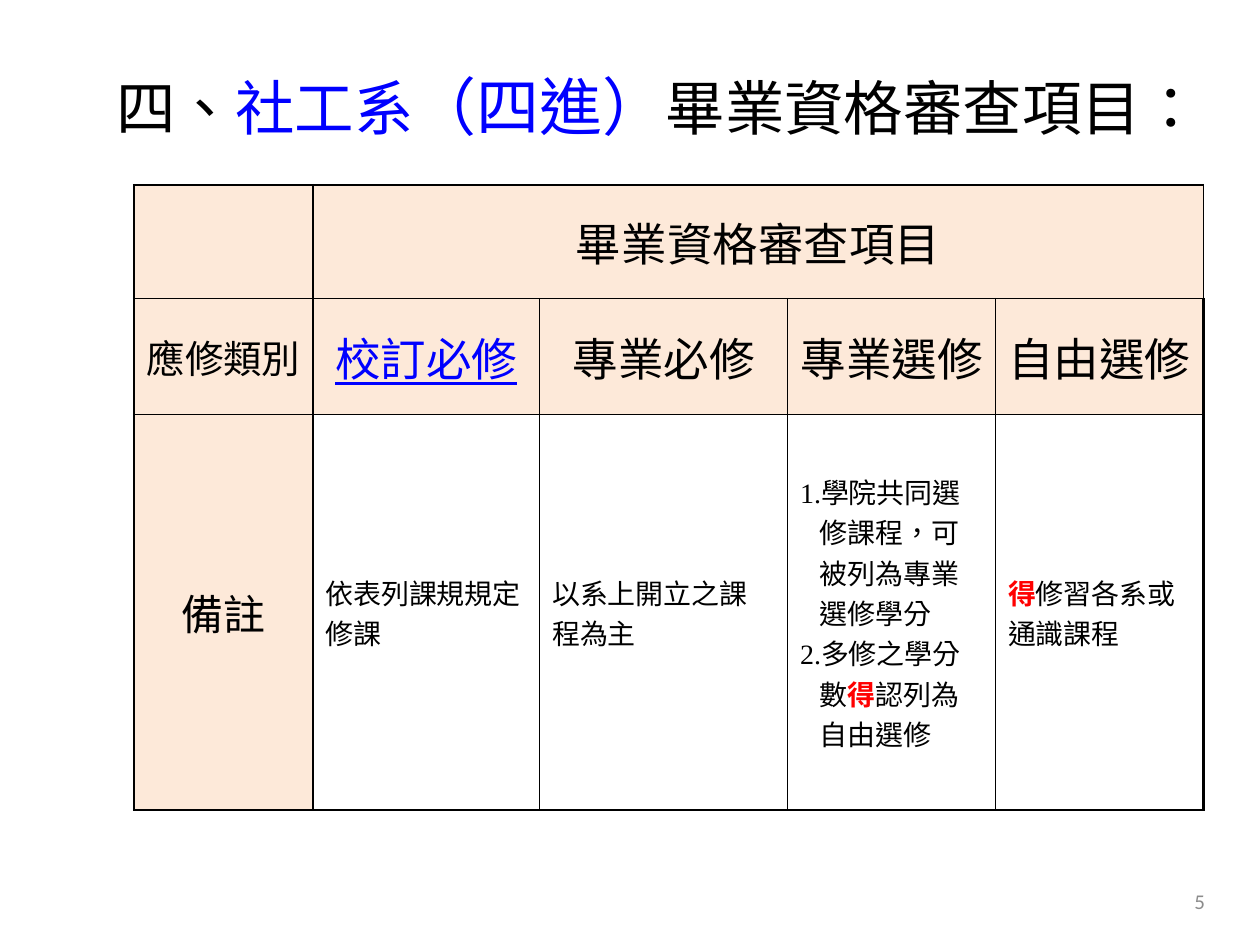
import pptx
import pptx.util
import pptx.dml.color
import pptx.enum.text
import pptx.oxml
import pptx.oxml.ns

Cm, Pt = pptx.util.Cm, pptx.util.Pt
Align = pptx.enum.text.PP_ALIGN
Anchor = pptx.enum.text.MSO_ANCHOR

THEME = {
    "ink": "000000", "blue": "0000FF", "red": "FF0000", "grey": "8C8C8C",
    "peach": "FDE9D9",
    "latin": "Times New Roman", "asian": "Noto Sans CJK JP", "plain": "Calibri",
    "title": 34, "group": 36, "head": 26, "note": 24, "side": 22,
    "body": 16, "page": 12,
    "inner": 1, "outer": 1.5,
}

# A run is (text, size, colour, extra style).
TITLE = [
    ("四、", "title", "ink", ""),
    ("社工系", "title", "blue", ""),
    ("（四進）", "group", "blue", ""),
    ("畢業資格審查項目：", "title", "ink", ""),
]
PAGE = [("5", "page", "grey", "")]


def plain(text, size="body"):
    return (text, size, "ink", "")


MUST = ("得", "body", "red", "bold")

# Each cell is a list of paragraphs, each paragraph a list of runs.
ROWS = [
    [[], [[plain("畢業資格審查項目", "head")]], [], [], []],
    [
        [[plain("應修類別", "side")]],
        [[("校訂必修", "head", "blue", "underline")]],
        [[plain("專業必修", "head")]],
        [[plain("專業選修", "head")]],
        [[plain("自由選修", "head")]],
    ],
    [
        [[plain("備註", "note")]],
        [[plain("依表列課規規定修課")]],
        [[plain("以系上開立之課程為主")]],
        [
            [plain("1.學院共同選修課程，可被列為專業選修學分")],
            [plain("2.多修之學分數"), MUST, plain("認列為自由選修")],
        ],
        [[MUST, plain("修習各系或通識課程")]],
    ],
]
WIDTHS = [3.61, 4.57, 5, 4.19, 4.19]
HEIGHTS = [2.29, 2.34, 7.97]
LIST_CELL = (2, 3)


def tint(name):
    return pptx.dml.color.RGBColor.from_string(THEME[name])


def add_runs(para, runs, latin="latin"):
    for text, size, color, style in runs:
        run = para.add_run()
        run.text = text
        font = run.font
        font.size = Pt(THEME[size])
        font.color.rgb = tint(color)
        font.name = THEME[latin]
        font.bold = style == "bold"
        font.underline = style == "underline"
        props = run._r.get_or_add_rPr()
        props.set("lang", "zh-TW")
        asian = pptx.oxml.parse_xml(
            f'<a:ea {pptx.oxml.ns.nsdecls("a")} typeface="{THEME["asian"]}"/>')
        props.find(pptx.oxml.ns.qn("a:latin")).addnext(asian)


def add_label(slide, place, runs, align, latin):
    frame = slide.shapes.add_textbox(*map(Cm, place)).text_frame
    frame.word_wrap = True
    frame.vertical_anchor = Anchor.MIDDLE
    frame.paragraphs[0].alignment = align
    add_runs(frame.paragraphs[0], runs, latin)


def add_edges(cell, row, col):
    """Draw the cell borders, heavier along the rim of the table."""
    rims = {"L": col == 0, "R": col == len(WIDTHS) - 1,
            "T": row == 0, "B": row == len(HEIGHTS) - 1}
    props = cell._tc.get_or_add_tcPr()
    for side, rim in rims.items():
        width = Pt(THEME["outer" if rim else "inner"])
        props.append(pptx.oxml.parse_xml(
            f'<a:ln{side} {pptx.oxml.ns.nsdecls("a")} w="{width}"><a:solidFill>'
            f'<a:srgbClr val="{THEME["ink"]}"/></a:solidFill></a:ln{side}>'))


def fill_cell(cell, row, col, paras):
    head = row < 2 or col == 0
    add_edges(cell, row, col)
    if head:
        cell.fill.solid()
        cell.fill.fore_color.rgb = tint("peach")
    else:
        cell.fill.background()
    cell.vertical_anchor = Anchor.MIDDLE
    cell.margin_left = cell.margin_right = Cm(0.2 if head else 0.25)
    frame = cell.text_frame
    for index, runs in enumerate(paras):
        para = frame.add_paragraph() if index else frame.paragraphs[0]
        para.alignment = Align.CENTER if head else Align.LEFT
        if (row, col) == LIST_CELL:
            cell.margin_right = Cm(0.45)
            props = para._p.get_or_add_pPr()
            props.set("marL", str(Cm(0.39)))
            props.set("indent", str(-Cm(0.39)))
        add_runs(para, runs)


def add_grid(slide):
    place = (2.7, 3.73, sum(WIDTHS), sum(HEIGHTS))
    table = slide.shapes.add_table(
        len(HEIGHTS), len(WIDTHS), *map(Cm, place)).table
    table.first_row = table.horz_banding = False
    for column, width in zip(table.columns, WIDTHS):
        column.width = Cm(width)
    for line, height in zip(table.rows, HEIGHTS):
        line.height = Cm(height)
    table.cell(0, 1).merge(table.cell(0, len(WIDTHS) - 1))
    for row, cells in enumerate(ROWS):
        for col, paras in enumerate(cells):
            fill_cell(table.cell(row, col), row, col, paras)


def main():
    deck = pptx.Presentation()
    deck.slide_width, deck.slide_height = Cm(25.4), Cm(19.05)
    slide = deck.slides.add_slide(deck.slide_layouts[6])
    add_label(slide, (18.62, 17.65, 5.92, 1.02), PAGE, Align.RIGHT, "plain")
    add_grid(slide)
    add_label(slide, (2.1, 0.74, 22.43, 2.77), TITLE, Align.LEFT, "asian")
    deck.save("out.pptx")


if __name__ == "__main__":
    main()
